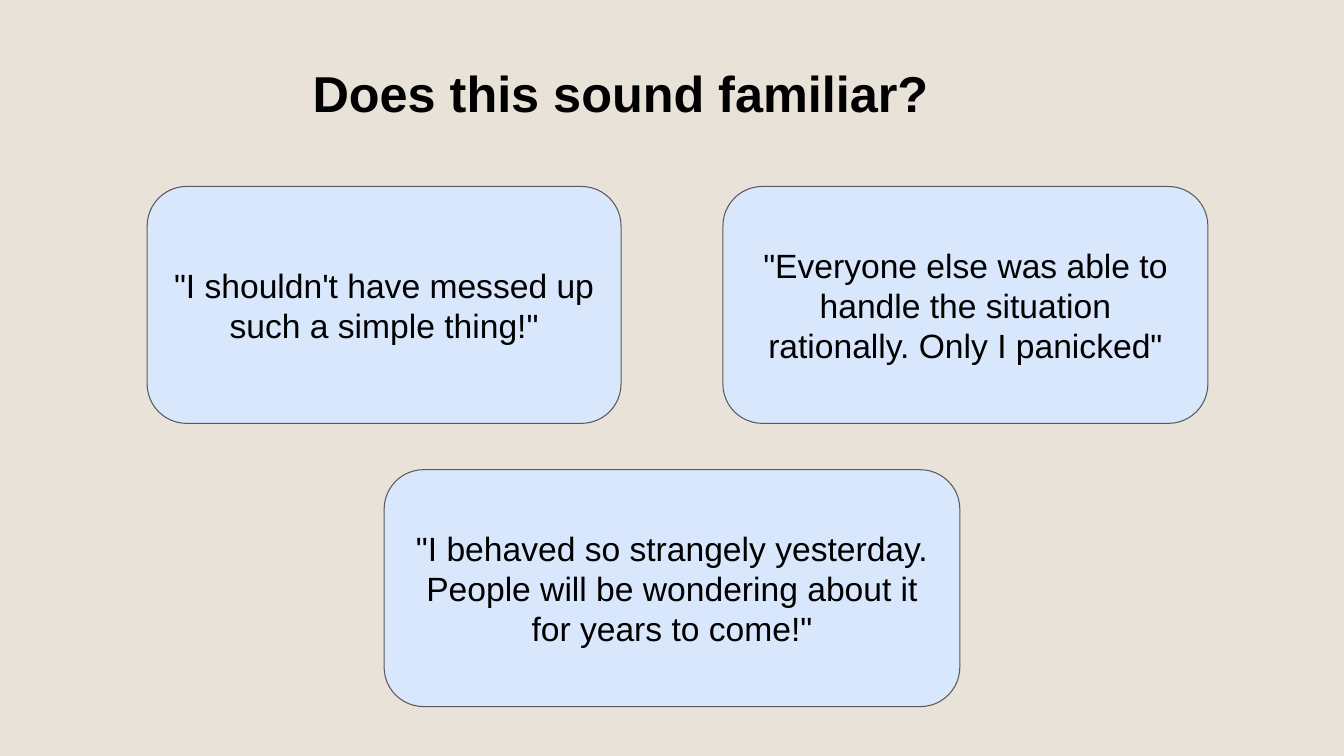
from pptx import Presentation
from pptx.dml.color import RGBColor
from pptx.enum.shapes import MSO_SHAPE
from pptx.enum.text import MSO_ANCHOR, PP_ALIGN
from pptx.util import Inches, Pt

BEIGE = RGBColor(0xE8, 0xE2, 0xD8)
PALE_BLUE = RGBColor(0xD9, 0xE7, 0xFD)
GREY = RGBColor(0x59, 0x59, 0x59)
BLACK = RGBColor(0, 0, 0)

CARD_HEIGHT = 2.35
QUOTES = [  # left, top, width, text
    (1.46, 1.85, 4.7, '"I shouldn\'t have messed up such a simple thing!"'),
    (7.17, 1.85, 4.81, '"Everyone else was able to handle the situation rationally. Only I panicked"'),
    (3.81, 4.66, 5.71, '"I behaved so strangely yesterday. People will be wondering about it for years to come!"'),
]


def write_text(box, text, size, bold, alignment, anchor):
    frame = box.text_frame
    frame.word_wrap = True
    frame.vertical_anchor = anchor
    frame.margin_left = frame.margin_right = Inches(0.13)
    frame.margin_top = frame.margin_bottom = Inches(0.13)
    frame.text = text
    para = frame.paragraphs[0]
    para.alignment = alignment
    para.line_spacing = 1.0
    para.space_before = Pt(0)
    font = para.runs[0].font
    font.name = "Arial"
    font.size = Pt(size)
    font.bold = bold
    font.color.rgb = BLACK


deck = Presentation()
deck.slide_width = Inches(13.33)
deck.slide_height = Inches(7.5)
page = deck.slides.add_slide(deck.slide_layouts[5])
page.background.fill.solid()
page.background.fill.fore_color.rgb = BEIGE

title = page.shapes.title
title.left, title.top = Inches(2.97), Inches(0.49)
title.width, title.height = Inches(10.36), Inches(0.88)
write_text(title, "Does this sound familiar?", 36, True, PP_ALIGN.LEFT, MSO_ANCHOR.TOP)

for left, top, width, quote in QUOTES:
    card = page.shapes.add_shape(
        MSO_SHAPE.ROUNDED_RECTANGLE,
        Inches(left), Inches(top), Inches(width), Inches(CARD_HEIGHT),
    )
    card.shadow.inherit = False
    card.fill.solid()
    card.fill.fore_color.rgb = PALE_BLUE
    card.line.color.rgb = GREY
    card.line.width = Pt(0.75)
    write_text(card, quote, 24, False, PP_ALIGN.CENTER, MSO_ANCHOR.MIDDLE)

deck.save("out.pptx")
